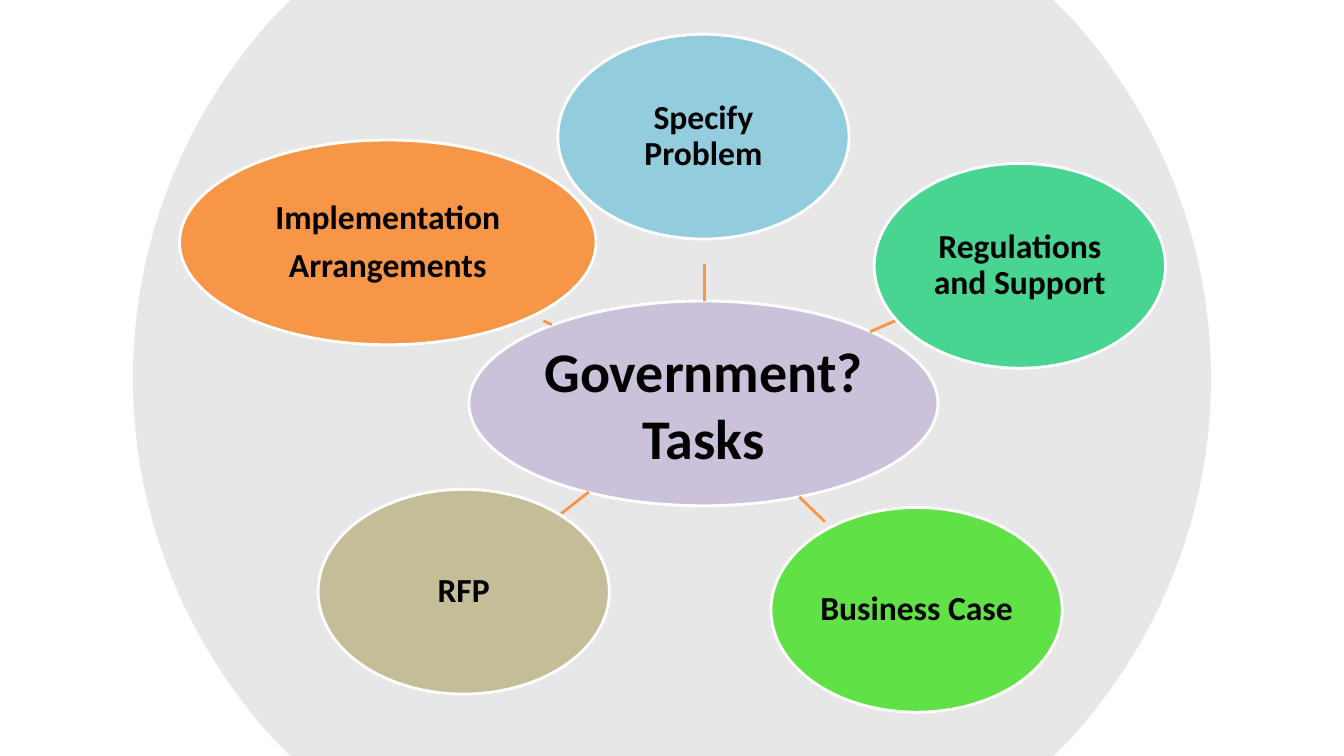
from dataclasses import dataclass
from math import cos, radians, sin

from lxml.etree import SubElement
from pptx import Presentation
from pptx.dml.color import RGBColor
from pptx.enum.shapes import MSO_SHAPE
from pptx.enum.text import MSO_ANCHOR, PP_ALIGN
from pptx.oxml.ns import qn
from pptx.util import Pt


@dataclass(frozen=True)
class Theme:
    font: str = "Calibri"
    ink: str = "000000"
    edge: str = "FFFFFF"
    spoke: str = "F79646"
    disc: str = "D9D9D9"
    hub: str = "CCC1DA"
    blue: str = "93CDDD"
    mint: str = "48D491"
    green: str = "60E146"
    tan: str = "C4BD97"
    orange: str = "F79646"
    large: int = 40
    small: int = 24
    stroke: int = 2


class Board:
    def __init__(self, slide, theme):
        self.shapes = slide.shapes
        self.theme = theme

    def paint(self, shape, color):
        shape.shadow.inherit = False
        shape.fill.solid()
        shape.fill.fore_color.rgb = RGBColor.from_string(color)

    def edge(self, shape, color):
        shape.line.color.rgb = RGBColor.from_string(color)
        shape.line.width = Pt(self.theme.stroke)

    def outline(self, dots, close):
        dots = [(Pt(x), Pt(y)) for x, y in dots]
        form = self.shapes.build_freeform(*dots[0])
        form.add_line_segments(dots[1:], close=close)
        return form.convert_to_shape()

    def disc(self, mid, half):
        """Draw a disc cut off at the top and bottom edges of the slide."""
        # Right side from the top down: two corners, then two curves
        side = [(272.5, -270), (284.5, -258), (346.5, -189.5), (385, -99.5), (385, 0)]
        side += [(x, -y) for x, y in side[-2::-1]]
        dots = side + [(-x, -y) for x, y in side]
        shape = self.outline([(mid + x, half + y) for x, y in dots], True)
        self.paint(shape, self.theme.disc)
        shape.line.fill.background()
        tint = shape.fill._xPr.find(qn("a:solidFill"))[0]
        SubElement(tint, qn("a:alpha")).set("val", "62000")
        # Turn the control points of each curve into one segment
        steps = list(shape._element.iter(qn("a:lnTo")))
        for at in (1, 4, 10, 13):
            first, *rest = steps[at:at + 3]
            first.tag = qn("a:cubicBezTo")
            for step in rest:
                first.append(step[0])
                step.getparent().remove(step)

    def oval(self, box, color, lines, size, pad, pitch):
        shape = self.shapes.add_shape(MSO_SHAPE.OVAL, *map(Pt, box))
        self.paint(shape, color)
        self.edge(shape, self.theme.edge)
        frame = shape.text_frame
        frame.word_wrap = True
        frame.vertical_anchor = MSO_ANCHOR.MIDDLE
        frame.margin_left = frame.margin_right = Pt(pad)
        frame.margin_top = frame.margin_bottom = Pt(pad)
        for i, line in enumerate(lines):
            para = frame.paragraphs[0] if i == 0 else frame.add_paragraph()
            para.alignment = PP_ALIGN.CENTER
            para.line_spacing = pitch
            para.space_after = Pt(size * 0.35)
            run = para.add_run()
            run.text = line
            run.font.name = self.theme.font
            run.font.size = Pt(size)
            run.font.bold = True
            run.font.color.rgb = RGBColor.from_string(self.theme.ink)

    def spoke(self, x, y, angle, span, shown, deep=3):
        """Draw a line of length shown from (x, y) in a turned box of length span."""
        turn = radians(angle)
        left = x + span / 2 * cos(turn) - span / 2
        mid = y + span / 2 * sin(turn)
        shape = self.outline([(left, mid), (left + shown, mid)], False)
        shape.top, shape.width, shape.height = Pt(mid - deep / 2), Pt(span), Pt(deep)
        shape.rotation = angle
        track = next(shape._element.iter(qn("a:path")))
        track.set("w", str(Pt(span)))
        track.set("h", str(Pt(deep)))
        for dot in track.iter(qn("a:pt")):
            dot.set("y", str(Pt(deep / 2)))
        shape.shadow.inherit = False
        shape.fill.background()
        self.edge(shape, self.theme.spoke)


def main():
    deck = Presentation()
    deck.slide_width, deck.slide_height = Pt(960), Pt(540)
    theme = Theme()
    board = Board(deck.slides.add_slide(deck.slide_layouts[6]), theme)
    high, wide = 146.25, 208

    # Backdrop and hub
    board.disc(mid=480, half=270)
    board.oval((335, 215, 335, high), theme.hub, ["Government? Tasks"],
               theme.large, 2, 1.0)

    # Tasks around the hub: spoke, left, top, width, colour, lines
    tasks = [
        ((503.25, 215.25, 270, 44, 26.5), 398.5, 24.5, wide, theme.blue,
         ["Specify Problem"]),
        ((621.5, 237, 336.5, 21, 21.5), 624.5, 116.75, wide, theme.mint,
         ["Regulations and Support"]),
        ((571, 355, 44.1, 31, 25.5), 550.75, 362.5, wide, theme.green,
         ["Business Case"]),
        ((420.5, 351.5, 141.9, 26, 25), 227.25, 349.5, wide, theme.tan, ["RFP"]),
        ((394, 232, 207.1, 15, 6.5), 128.25, 100, 297.5, theme.orange,
         ["Implementation", "Arrangements"]),
    ]
    for spoke, left, top, width, color, lines in tasks:
        board.spoke(*spoke)
        board.oval((left, top, width, high), color, lines, theme.small, 1.5, 0.9)

    deck.save("out.pptx")


if __name__ == "__main__":
    main()
